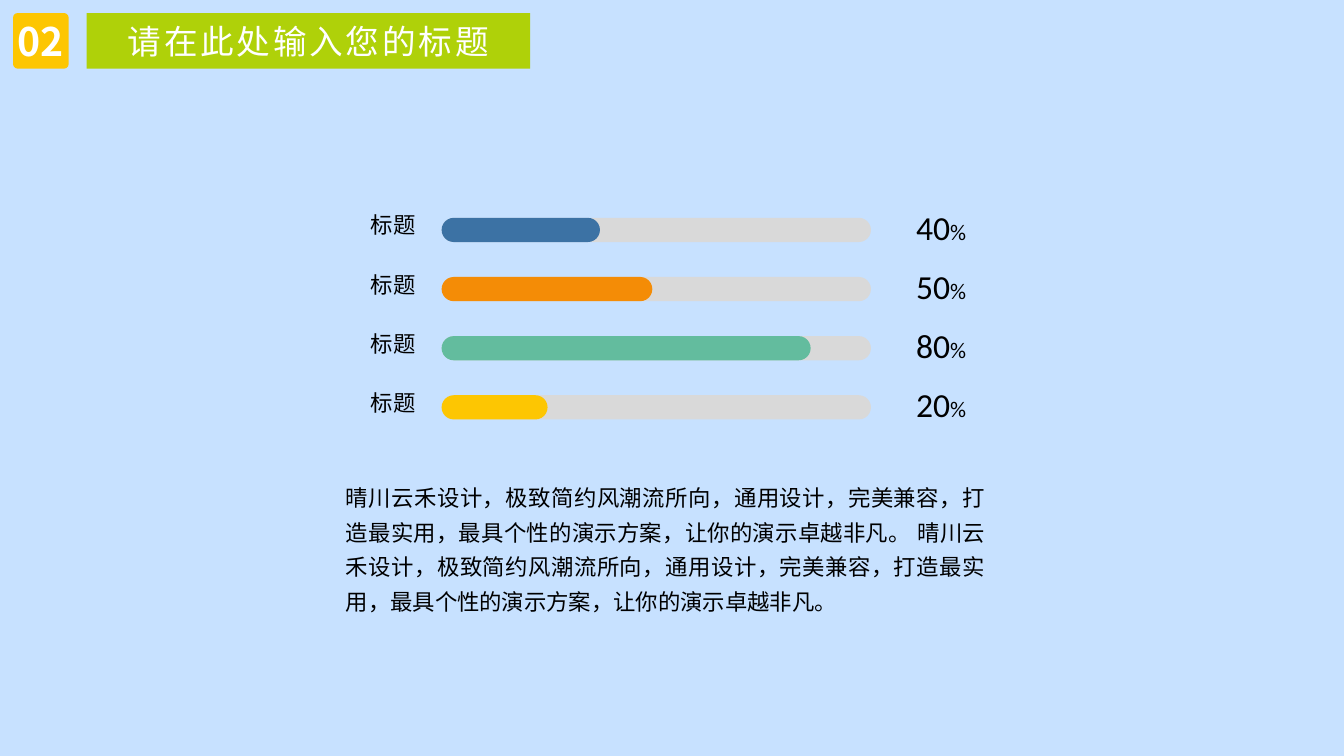
"""Build a slide with four progress bars, their labels and a paragraph."""
from lxml.etree import SubElement
from pptx import Presentation
from pptx.dml.color import RGBColor
from pptx.enum.shapes import MSO_SHAPE
from pptx.enum.text import MSO_ANCHOR, MSO_AUTO_SIZE, PP_ALIGN
from pptx.oxml.ns import qn
from pptx.util import Cm, Pt

BACKGROUND = RGBColor(0xC7, 0xE1, 0xFF)
TRACK_GRAY = RGBColor(0xD9, 0xD9, 0xD9)
BLUE = RGBColor(0x3C, 0x72, 0xA4)
ORANGE = RGBColor(0xF4, 0x8C, 0x06)
TEAL = RGBColor(0x63, 0xBC, 0x9E)
YELLOW = RGBColor(0xFD, 0xC6, 0x02)
GREEN = RGBColor(0xAF, 0xD1, 0x09)
WHITE = RGBColor(0xFF, 0xFF, 0xFF)
BLACK = RGBColor(0x00, 0x00, 0x00)

CJK_FONT = "Noto Sans CJK SC"
LATIN_FONT = "Calibri"
BODY_FONT = "Arial"

FIRST_BAR_TOP = 5.49
ROW_PITCH = 1.49
BAR_LEFT = 11.13
TRACK_WIDTH = 10.82
BAR_ROWS = [
    ("标题", "40", 3.99, BLUE),
    ("标题", "50", 5.31, ORANGE),
    ("标题", "80", 9.3, TEAL),
    ("标题", "20", 2.67, YELLOW),
]
BODY_TEXT = (
    "晴川云禾设计，极致简约风潮流所向，通用设计，完美兼容，打造最实用，最具个性的演示方案，让你的演示卓越非凡。 "
    "晴川云禾设计，极致简约风潮流所向，通用设计，完美兼容，打造最实用，最具个性的演示方案，让你的演示卓越非凡。"
)


def place(shape, left, top, width, height):
    """Move and size a shape, in centimetres."""
    shape.left, shape.top = Cm(left), Cm(top)
    shape.width, shape.height = Cm(width), Cm(height)


def add_run(paragraph, text, size, font_name, color=BLACK, bold=False):
    """Append a formatted run with the same Latin and East Asian font."""
    run = paragraph.add_run()
    run.text = text
    run.font.size = Pt(size)
    run.font.name = font_name
    run.font.bold = bold
    run.font.color.rgb = color
    properties = run.font._element
    properties.set("lang", "zh-CN")
    SubElement(properties, qn("a:ea")).set("typeface", font_name)
    return run


def prepare_frame(shape, anchor=MSO_ANCHOR.MIDDLE, inset=True):
    """Set wrapping, anchor and insets, and return the text frame."""
    frame = shape.text_frame
    frame.word_wrap = True
    frame.auto_size = MSO_AUTO_SIZE.NONE
    frame.vertical_anchor = anchor
    if not inset:
        frame.margin_left = frame.margin_right = 0
        frame.margin_top = frame.margin_bottom = 0
    return frame


def add_rounded_box(slide, left, top, width, height, color, rounding=0.5):
    """Add a plain rounded rectangle."""
    shape = slide.shapes.add_shape(
        MSO_SHAPE.ROUNDED_RECTANGLE, Cm(left), Cm(top), Cm(width), Cm(height))
    shape.adjustments[0] = rounding
    shape.shadow.inherit = False
    shape.fill.solid()
    shape.fill.fore_color.rgb = color
    shape.line.fill.background()
    return shape


def add_text_box(slide, left, top, width, height, inset=True):
    """Add a text box and return its first paragraph."""
    box = slide.shapes.add_textbox(Cm(left), Cm(top), Cm(width), Cm(height))
    return prepare_frame(box, inset=inset).paragraphs[0]


def add_bar_row(slide, top, label, percent, width, color):
    """Add a label, a track with its filled part, and a percentage."""
    add_rounded_box(slide, BAR_LEFT, top, TRACK_WIDTH, 0.61, TRACK_GRAY)
    add_rounded_box(slide, BAR_LEFT, top, width, 0.61, color)
    paragraph = add_text_box(slide, 8.18, top - 0.33, 2.54, 1.02)
    paragraph.alignment = PP_ALIGN.RIGHT
    add_run(paragraph, label, 16, CJK_FONT)
    paragraph = add_text_box(slide, 23.09, top - 0.26, 2.01, 0.97, inset=False)
    add_run(paragraph, percent, 24, LATIN_FONT)
    add_run(paragraph, "%", 16, LATIN_FONT)


def add_section_number(slide, number):
    """Add the yellow square with the section number."""
    square = add_rounded_box(slide, 0.33, 0.33, 1.4, 1.4, YELLOW, 0.08)
    paragraph = prepare_frame(square, inset=False).paragraphs[0]
    paragraph.alignment = PP_ALIGN.CENTER
    add_run(paragraph, number, 28, CJK_FONT, WHITE, bold=True)


def format_title(title, text):
    """Turn the title placeholder into a green rounded banner."""
    place(title, 2.18, 0.33, 11.18, 1.4)
    geometry = SubElement(title._element.spPr, qn("a:prstGeom"), prst="roundRect")
    guides = SubElement(geometry, qn("a:avLst"))
    SubElement(guides, qn("a:gd"), name="adj", fmla="val 9100")
    title.fill.solid()
    title.fill.fore_color.rgb = GREEN
    paragraph = prepare_frame(title).paragraphs[0]
    paragraph.alignment = PP_ALIGN.CENTER
    run = add_run(paragraph, text, 24, CJK_FONT, WHITE)
    run.font._element.set("spc", "200")


def format_body(body, text):
    """Turn the body placeholder into a justified paragraph without bullet."""
    place(body, 8.46, 11.86, 16.64, 3.53)
    paragraph = prepare_frame(body, MSO_ANCHOR.TOP).paragraphs[0]
    paragraph.alignment = PP_ALIGN.JUSTIFY
    paragraph.line_spacing = 1.3
    paragraph.space_before = paragraph.space_after = Pt(6)
    properties = paragraph._p.get_or_add_pPr()
    properties.set("marL", "0")
    properties.set("indent", "0")
    SubElement(properties, qn("a:buNone"))
    add_run(paragraph, text, 16, BODY_FONT)


def main():
    """Build and save the presentation."""
    presentation = Presentation()
    presentation.slide_width, presentation.slide_height = Cm(33.87), Cm(19.05)
    slide = presentation.slides.add_slide(presentation.slide_layouts[1])
    slide.background.fill.solid()
    slide.background.fill.fore_color.rgb = BACKGROUND
    format_title(slide.shapes.title, "请在此处输入您的标题")
    format_body(slide.placeholders[1], BODY_TEXT)
    add_section_number(slide, "02")
    for index, row in enumerate(BAR_ROWS):
        add_bar_row(slide, FIRST_BAR_TOP + index * ROW_PITCH, *row)
    presentation.save("out.pptx")


if __name__ == "__main__":
    main()
